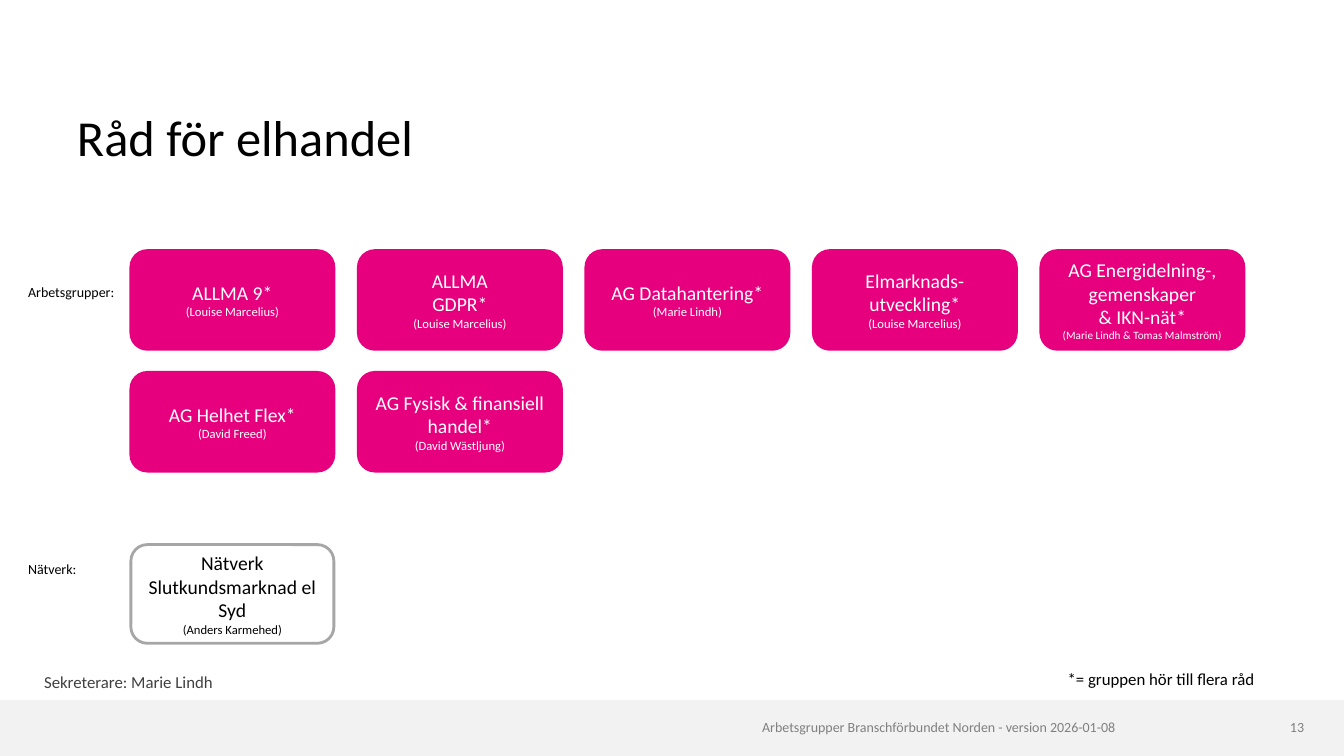
import pptx
import pptx.util
import pptx.dml.color
import pptx.enum.shapes
import pptx.enum.text
from dataclasses import dataclass

Pt = pptx.util.Pt
ALIGN = pptx.enum.text.PP_ALIGN
ANCHOR = pptx.enum.text.MSO_ANCHOR
SHAPE = pptx.enum.shapes.MSO_SHAPE

# Content
TITLE = "Råd för elhandel"
GROUPS = [  # rows of (name lines, leader, leader size)
    [
        (["ALLMA 9*"], "(Louise Marcelius)", 9),
        (["ALLMA", "GDPR*"], "(Louise Marcelius)", 9),
        (["AG Datahantering*"], "(Marie Lindh)", 9),
        (["Elmarknads-utveckling*"], "(Louise Marcelius)", 9),
        (["AG Energidelning-, gemenskaper", "& IKN-nät*"],
         "(Marie Lindh & Tomas Malmström)", 8),
    ],
    [
        (["AG Helhet Flex*"], "(David Freed)", 9),
        (["AG Fysisk & finansiell handel*"], "(David Wästljung)", 9),
    ],
]
NETWORK = (["Nätverk Slutkundsmarknad el Syd"], "(Anders Karmehed)", 9)
LABELS = [("Arbetsgrupper:", 200), ("Nätverk:", 398)]  # text, top
CLERK = "Sekreterare: Marie Lindh"
NOTE = "*= gruppen hör till flera råd"
FOOTER = "Arbetsgrupper Branschförbundet Norden - version 2026-01-08"
NUMBER = "13"


@dataclass
class Theme:
    font: str = "Calibri"
    pink: str = "E6007E"
    gray: str = "A6A6A6"
    band: str = "F2F2F2"
    white: str = "FFFFFF"
    black: str = "000000"
    dark: str = "404040"
    mute: str = "808080"
    title: int = 36
    name: int = 14
    body: int = 12
    small: int = 10


theme = Theme()

# Layout
WIDTH, HEIGHT = 960, 540
LEFT, TOP = 93.5, 179
CARD_W, CARD_H = 145, 70.5
STEP_X, STEP_Y = 162.5, 87
NET_TOP = 389
BAND_H = 40


def color(code):
    return pptx.dml.color.RGBColor.from_string(code)


def write(para, text, size, code, align=ALIGN.LEFT, space=1.0):
    para.alignment = align
    para.line_spacing = space
    run = para.add_run()
    run.text = text
    run.font.name = theme.font
    run.font.size = Pt(size)
    run.font.color.rgb = color(code)


def clear(frame):
    frame.margin_left = frame.margin_right = 0
    frame.margin_top = frame.margin_bottom = 0


def label(box, text, size, code, align=ALIGN.LEFT, space=1.0,
          inset=True, wrap=True, anchor=ANCHOR.TOP):
    frame = slide.shapes.add_textbox(*map(Pt, box)).text_frame
    frame.word_wrap = wrap
    frame.vertical_anchor = anchor
    if not inset:
        clear(frame)
    write(frame.paragraphs[0], text, size, code, align, space)


def card(left, top, group, fill, line, ink):
    names, leader, size = group
    box = slide.shapes.add_shape(SHAPE.ROUNDED_RECTANGLE, Pt(left), Pt(top),
                                 Pt(CARD_W), Pt(CARD_H))
    box.shadow.inherit = False
    if fill:
        box.fill.solid()
        box.fill.fore_color.rgb = color(fill)
    else:
        box.fill.background()
    box.line.color.rgb = color(line)
    box.line.width = Pt(2)
    frame = box.text_frame
    frame.word_wrap = True
    frame.vertical_anchor = ANCHOR.MIDDLE
    lines = [(name, theme.name) for name in names] + [(leader, size)]
    for i, (text, points) in enumerate(lines):
        para = frame.add_paragraph() if i else frame.paragraphs[0]
        write(para, text, points, ink, ALIGN.CENTER)


deck = pptx.Presentation()
deck.slide_width, deck.slide_height = Pt(WIDTH), Pt(HEIGHT)
slide = deck.slides.add_slide(deck.slide_layouts[5])

# Footer band
band = slide.shapes.add_shape(SHAPE.RECTANGLE, 0, Pt(HEIGHT - BAND_H),
                              Pt(WIDTH), Pt(BAND_H))
band.shadow.inherit = False
band.fill.solid()
band.fill.fore_color.rgb = color(theme.band)
band.line.fill.background()
for box, text in [((158.5, 513.5, 638, 14), FOOTER),
                  ((903.5, 513.5, 28, 14), NUMBER)]:
    label(box, text, theme.small, theme.mute, ALIGN.RIGHT, inset=False)

# Title
title = slide.shapes.title
title.left, title.top, title.width, title.height = map(
    Pt, (55, 42.5, 683, 77))
frame = title.text_frame
frame.auto_size = pptx.enum.text.MSO_AUTO_SIZE.NONE
frame.vertical_anchor = ANCHOR.BOTTOM
clear(frame)
write(frame.paragraphs[0], TITLE, theme.title, theme.black, space=0.85)

# Working groups and network
for row, groups in enumerate(GROUPS):
    for col, group in enumerate(groups):
        card(LEFT + col * STEP_X, TOP + row * STEP_Y, group,
             theme.pink, theme.pink, theme.white)
card(LEFT, NET_TOP, NETWORK, None, theme.gray, theme.black)

# Row labels
for text, top in LABELS:
    label((13, top, 87, 16), text, theme.small, theme.black, space=0.9)

# Secretary and footnote
label((31.5, 479.5, 350, 16.5), CLERK, theme.body, theme.dark, space=0.97,
      inset=False, anchor=ANCHOR.MIDDLE)
label((755.5, 476, 149, 20), NOTE, theme.body, theme.black, space=0.9,
      wrap=False)

deck.save("out.pptx")
